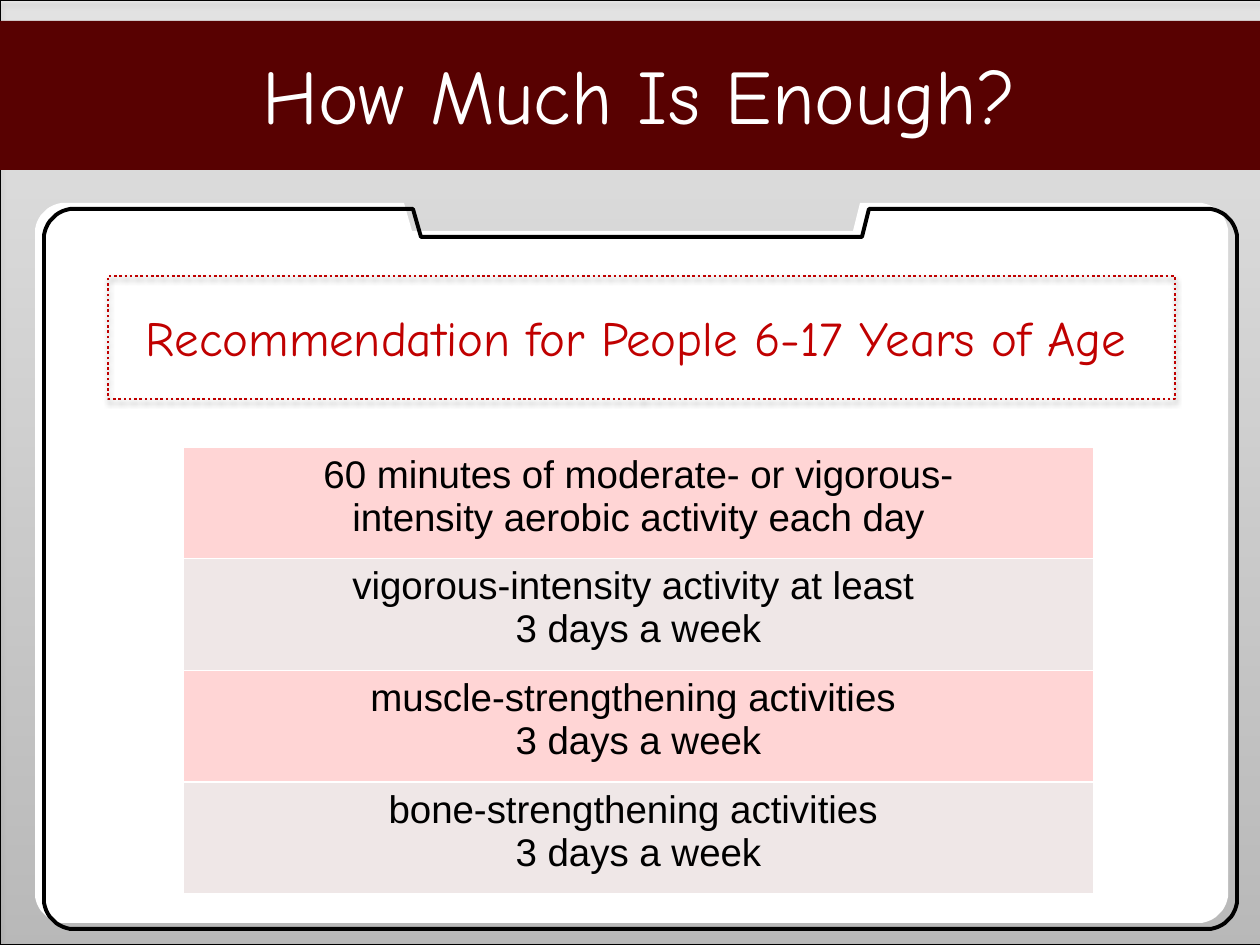
from math import cos, pi, sin

from lxml.etree import SubElement
from pptx import Presentation
from pptx.dml.color import RGBColor
from pptx.enum.dml import MSO_LINE
from pptx.enum.shapes import MSO_SHAPE
from pptx.enum.text import MSO_ANCHOR, PP_ALIGN
from pptx.oxml.ns import qn
from pptx.util import Pt

SCALE = 914400 / 126
COLORS = {
    "black": "000000", "white": "FFFFFF", "silver": "BDBDBD", "maroon": "580101",
    "red": "C00000", "pink": "FFD5D5", "mist": "EFE7E7",
}
ROWS = [
    ("60 minutes of moderate- or vigorous-", "intensity aerobic activity each day"),
    ("vigorous-intensity activity at least ", "3 days a week"),
    ("muscle-strengthening activities ", "3 days a week"),
    ("bone-strengthening activities ", "3 days a week"),
]


def emu(*lengths):
    """Turn px lengths into EMU."""
    return [round(length * SCALE) for length in lengths]


def rgb(name):
    """Look up a named colour."""
    return RGBColor.from_string(COLORS[name])


def write(frame, lines, font, size, color):
    """Fill a text frame with centred paragraphs."""
    frame.word_wrap = True
    for index, line in enumerate(lines):
        para = frame.add_paragraph() if index else frame.paragraphs[0]
        para.alignment = PP_ALIGN.CENTER
        span = para.add_run()
        span.text = line
        for name, value in {"name": font, "size": Pt(size), "bold": False}.items():
            setattr(span.font, name, value)
        span.font.color.rgb = rgb(color)


def style(shape, fill=None, line=None, width=1, dash=None):
    """Set the fill and outline of a shape and clear its shadow."""
    shape.shadow.inherit = False
    if fill:
        shape.fill.solid()
        shape.fill.fore_color.rgb = rgb(fill)
    else:
        shape.fill.background()
    if line:
        shape.line.color.rgb = rgb(line)
        shape.line.width = Pt(width)
        if dash:
            shape.line.dash_style = dash
    else:
        shape.line.fill.background()


def add_shadow(shape):
    """Give a shape a soft shadow straight below it."""
    effects = shape._element.spPr.find(qn("a:effectLst"))
    shadow = SubElement(effects, qn("a:outerShdw"), blurRad=str(Pt(3.1)),
                        dist=str(Pt(1.8)), dir="5400000", rotWithShape="0")
    color = SubElement(shadow, qn("a:srgbClr"), val=COLORS["black"])
    SubElement(color, qn("a:alpha"), val="35000")


def add_backdrop(page, box):
    """Cover the page with a translucent gradient."""
    shape = page.shapes.add_shape(MSO_SHAPE.RECTANGLE, *emu(*box))
    style(shape, line="black", width=0.75)
    shape.fill.gradient()
    shape.fill.gradient_angle = 90
    for stop, name in zip(shape.fill.gradient_stops, ("black", "silver")):
        stop.color.rgb = rgb(name)
    for color in shape._element.spPr.find(qn("a:gradFill")).iter(qn("a:srgbClr")):
        SubElement(color, qn("a:alpha"), val="21000")
    add_shadow(shape)


def add_title(page, box):
    """Draw the title band and set the title on it."""
    left, top, width, height = box
    band = page.shapes.add_shape(MSO_SHAPE.RECTANGLE, *emu(*box))
    style(band, fill="maroon")
    title = page.shapes.title
    place = emu(left + 125, top + 14, width - 241, height - 32)
    for name, value in zip(("left", "top", "width", "height"), place):
        setattr(title, name, value)
    title.text_frame.vertical_anchor = MSO_ANCHOR.MIDDLE
    write(title.text_frame, ["How Much Is Enough?"], "Comic Neue", 44, "white")
    page.shapes._spTree.append(title._element)


def add_folder(page, box, **look):
    """Draw a rounded card with a notch in its top edge."""
    left, top, width, height = box
    radius, steps = 30, 12
    points = [(left + x, top + y) for x, y in
              ((radius, 0), (369, 0), (377, 28), (818, 28), (825, 0))]
    centers = [(width - radius, radius), (width - radius, height - radius),
               (radius, height - radius), (radius, radius)]
    for corner, (x, y) in enumerate(centers):
        for step in range(steps + 1):
            angle = (corner - 1 + step / steps) * pi / 2
            points.append((left + x + radius * cos(angle), top + y + radius * sin(angle)))
    builder = page.shapes.build_freeform(*points[0], scale=SCALE)
    builder.add_line_segments(points[1:], close=True)
    style(builder.convert_to_shape(), **look)


def add_heading(page, box):
    """Draw the dotted frame with the heading inside."""
    left, top, width, height = box
    frame = page.shapes.add_shape(MSO_SHAPE.RECTANGLE, *emu(*box))
    style(frame, line="red", width=1.5, dash=MSO_LINE.ROUND_DOT)
    add_shadow(frame)
    label = page.shapes.add_textbox(*emu(left, top + 25, width - 11, 72))
    write(label.text_frame, ["Recommendation for People 6-17 Years of Age"],
          "Comic Neue", 28, "red")


def add_borders(cell):
    """Put thin white borders ahead of the fill of a cell."""
    properties = cell._tc.get_or_add_tcPr()
    for index, side in enumerate(("a:lnL", "a:lnR", "a:lnT", "a:lnB")):
        line = SubElement(properties, qn(side), w=str(Pt(1)))
        fill = SubElement(line, qn("a:solidFill"))
        SubElement(fill, qn("a:srgbClr"), val=COLORS["white"])
        properties.insert(index, line)


def add_activities(page, box):
    """Build the one-column table of activities."""
    table = page.shapes.add_table(len(ROWS), 1, *emu(*box)).table
    table.first_row = False
    table.horz_banding = False
    for index, lines in enumerate(ROWS):
        cell = table.cell(index, 0)
        cell.fill.solid()
        cell.fill.fore_color.rgb = rgb(("pink", "mist")[index % 2])
        add_borders(cell)
        write(cell.text_frame, lines, "Arial", 22, "black")


def main():
    """Build and save the deck."""
    deck = Presentation()
    deck.slide_width, deck.slide_height = emu(1260, 945)
    page = deck.slides.add_slide(deck.slide_layouts[5])
    add_backdrop(page, (0, 0, 1270, 945))
    add_title(page, (0, 21, 1270, 149))
    add_folder(page, (35, 203, 1193, 720), fill="white")
    add_folder(page, (44, 209, 1193, 720), line="black", width=2.25)
    add_heading(page, (108, 276, 1067, 123))
    add_activities(page, (183, 447, 911, 447))
    deck.save("out.pptx")


if __name__ == "__main__":
    main()
